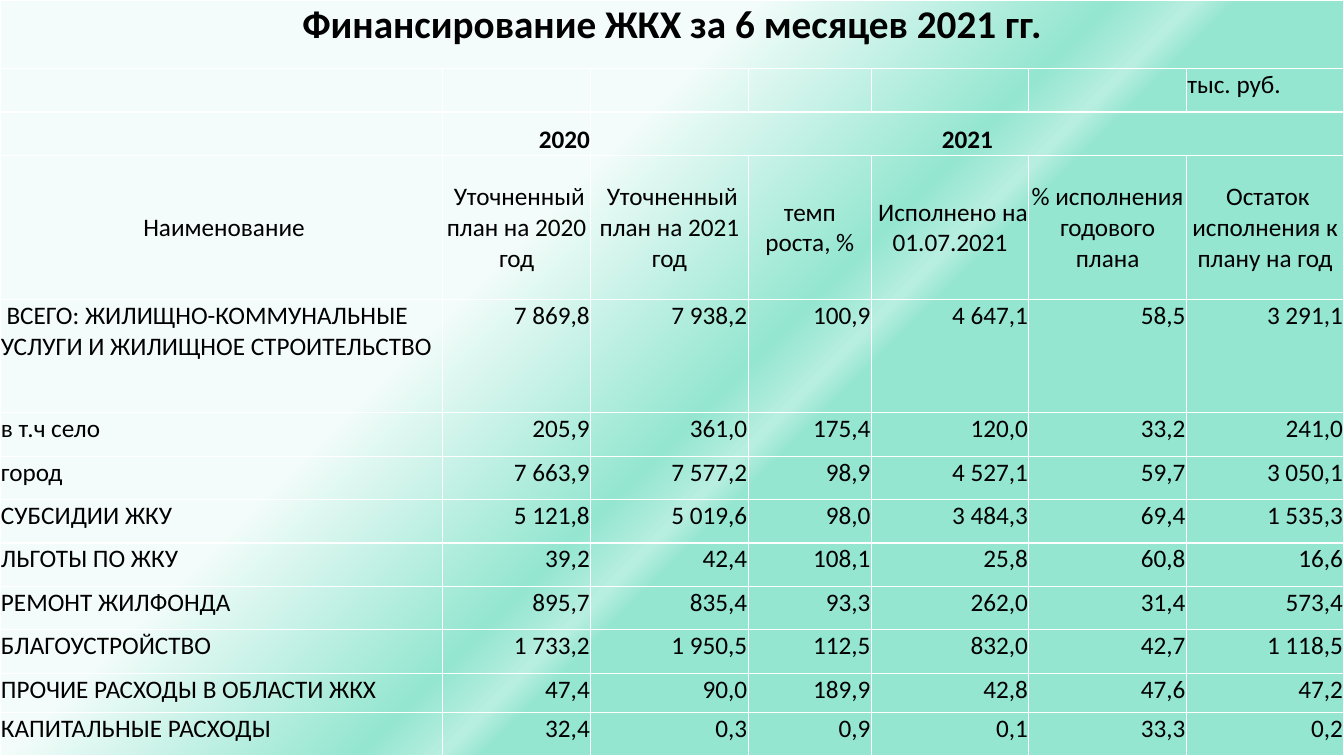
import pptx
import pptx.dml.color
import pptx.enum.text
import pptx.oxml
import pptx.oxml.ns
import pptx.util

Pt = pptx.util.Pt
ALIGN = pptx.enum.text.PP_ALIGN
ANCHOR = pptx.enum.text.MSO_ANCHOR
NS = pptx.oxml.ns.nsdecls("a")


def color(hex_string):
    return pptx.dml.color.RGBColor.from_string(hex_string)


def add_borders(cell, hex_string, width):
    for side in ("lnL", "lnR", "lnT", "lnB"):
        cell._tc.get_or_add_tcPr().append(pptx.oxml.parse_xml(
            f'<a:{side} {NS} w="{Pt(width)}"><a:solidFill>'
            f'<a:srgbClr val="{hex_string}"/></a:solidFill></a:{side}>'))


deck = pptx.Presentation()
deck.slide_width, deck.slide_height = Pt(960), Pt(540)
slide = deck.slides.add_slide(deck.slide_layouts[6])

# Background: diagonal gradient with a light streak
background = slide.background.fill
background.gradient()
gradient = slide.background._cSld.find(".//" + pptx.oxml.ns.qn("a:gradFill"))
for part in list(gradient):
    gradient.remove(part)
stops = "".join(
    f'<a:gs pos="{percent * 1000}"><a:srgbClr val="{shade}"/></a:gs>'
    for percent, shade in ((36, "F3FCFA"), (53, "94E6D0"), (57, "B8EEE0"), (59, "94E6D0")))
gradient.append(pptx.oxml.parse_xml(f"<a:gsLst {NS}>{stops}</a:gsLst>"))
gradient.append(pptx.oxml.parse_xml(f'<a:lin {NS} ang="{45 * 60000}" scaled="0"/>'))

# Content: title, unit, years, column headings, then figures
TITLE, UNIT, YEARS, HEADINGS = range(4)
rows = [
    ["Финансирование ЖКХ за 6 месяцев 2021 гг.", "", "", "", "", "", ""],
    ["", "", "", "", "", "", "тыс. руб."],
    ["", "2020", "2021", "", "", "", ""],
    [" Наименование", " Уточненный план на 2020 год", " Уточненный план на 2021 год",
     "темп роста, %", " Исполнено на 01.07.2021", "% исполнения годового плана",
     " Остаток исполнения к плану на год"],
    [" ВСЕГО: ЖИЛИЩНО-КОММУНАЛЬНЫЕ УСЛУГИ И ЖИЛИЩНОЕ СТРОИТЕЛЬСТВО",
     "7 869,8", "7 938,2", "100,9", "4 647,1", "58,5", "3 291,1"],
    ["в т.ч село", "205,9", "361,0", "175,4", "120,0", "33,2", "241,0"],
    ["город", "7 663,9", "7 577,2", "98,9", "4 527,1", "59,7", "3 050,1"],
    ["СУБСИДИИ ЖКУ", "5 121,8", "5 019,6", "98,0", "3 484,3", "69,4", "1 535,3"],
    ["ЛЬГОТЫ ПО ЖКУ", "39,2", "42,4", "108,1", "25,8", "60,8", "16,6"],
    ["РЕМОНТ ЖИЛФОНДА", "895,7", "835,4", "93,3", "262,0", "31,4", "573,4"],
    ["БЛАГОУСТРОЙСТВО", "1 733,2", "1 950,5", "112,5", "832,0", "42,7", "1 118,5"],
    ["ПРОЧИЕ РАСХОДЫ В ОБЛАСТИ ЖКХ", "47,4", "90,0", "189,9", "42,8", "47,6", "47,2"],
    ["КАПИТАЛЬНЫЕ РАСХОДЫ", "32,4", "0,3", "0,9", "0,1", "33,3", "0,2"],
]
column_widths = [316, 106, 112.5, 88, 112.5, 112.5, 112.5]
row_heights = [49, 31, 31, 103, 81] + [31] * 6 + [28, 31]

# Table covering the whole slide
finances = slide.shapes.add_table(
    len(rows), len(column_widths), 0, 0, Pt(960), Pt(540)).table
finances.first_row = finances.horz_banding = False
for column, width in zip(finances.columns, column_widths):
    column.width = Pt(width)
for row, height in zip(finances.rows, row_heights):
    row.height = Pt(height)
finances.cell(TITLE, 0).merge(finances.cell(TITLE, 6))
finances.cell(YEARS, 2).merge(finances.cell(YEARS, 6))

# Cell text and format
for r, texts in enumerate(rows):
    for c, text in enumerate(texts):
        cell = finances.cell(r, c)
        add_borders(cell, "FFFFFF", 1)
        cell.fill.background()
        cell.margin_left = cell.margin_right = cell.margin_top = Pt(0.7)
        cell.margin_bottom = 0
        cell.vertical_anchor = {YEARS: ANCHOR.BOTTOM, HEADINGS: ANCHOR.MIDDLE}.get(r, ANCHOR.TOP)

        paragraph = cell.text_frame.paragraphs[0]
        paragraph.text = text
        if r in (TITLE, HEADINGS) or text == "2021":
            paragraph.alignment = ALIGN.CENTER
        elif c == 0 or r == UNIT:
            paragraph.alignment = ALIGN.LEFT
        else:
            paragraph.alignment = ALIGN.RIGHT
        for run in paragraph.runs:
            run.font.name = "Calibri"
            run.font.size = Pt(28 if r == TITLE else 18)
            run.font.bold = r in (TITLE, YEARS)
            run.font.color.rgb = color("000000")

deck.save("out.pptx")
